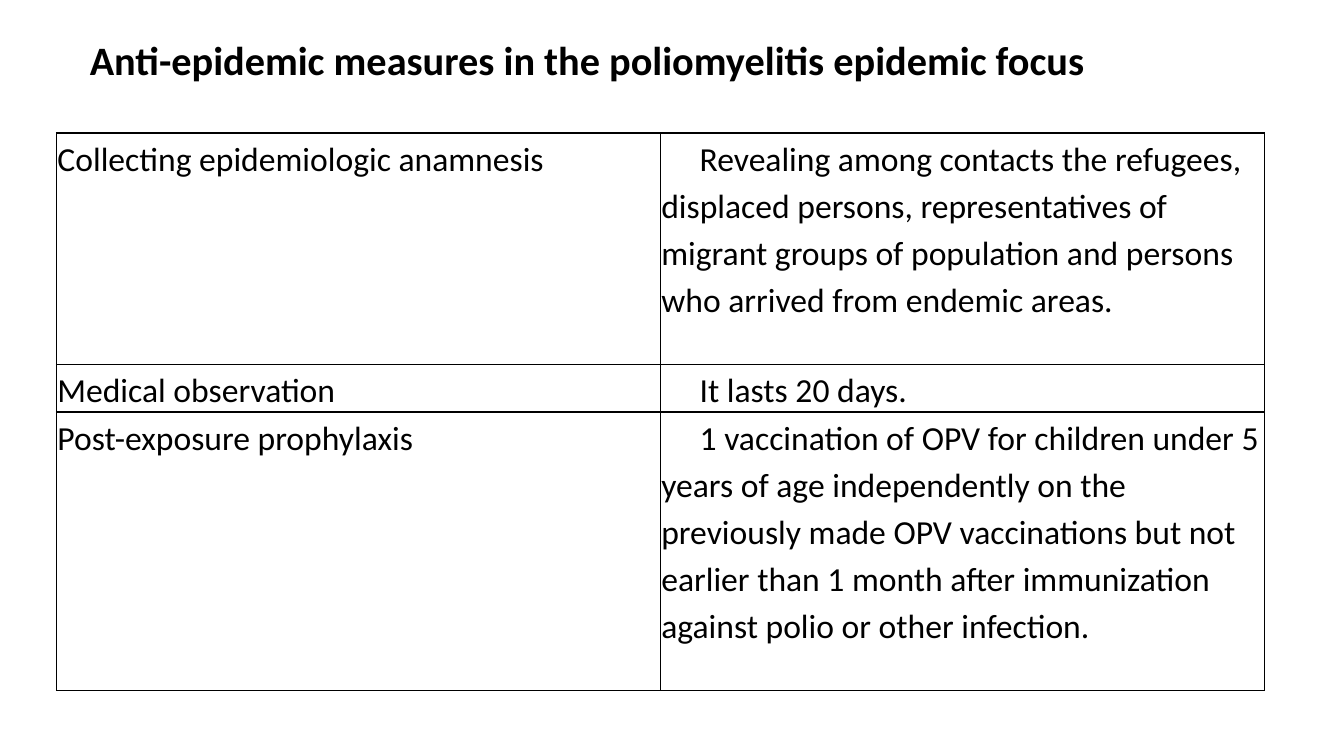
"""Build a slide with a table of measures in a poliomyelitis focus."""
import pptx
import pptx.dml.color
import pptx.enum.text
import pptx.oxml
import pptx.oxml.ns
import pptx.util

Inches = pptx.util.Inches
Pt = pptx.util.Pt


def style(para, size, space, bold=False):
    para.alignment = pptx.enum.text.PP_ALIGN.LEFT
    para.line_spacing = space
    para.font.name = "Calibri"
    para.font.size = Pt(size)
    para.font.bold = bold
    para.font.color.rgb = pptx.dml.color.RGBColor.from_string("000000")


def border(cell, color):
    props = cell._tc.get_or_add_tcPr()
    for place, side in enumerate(("lnL", "lnR", "lnT", "lnB")):
        props.insert(place, pptx.oxml.parse_xml(
            f'<a:{side} {pptx.oxml.ns.nsdecls("a")} w="{Pt(1)}">'
            f'<a:solidFill><a:srgbClr val="{color}"/></a:solidFill></a:{side}>'))


rows = [
    (2.3, "Collecting epidemiologic anamnesis",
     "Revealing among contacts the refugees, displaced persons, representatives "
     "of migrant groups of population and persons who arrived from endemic areas."),
    (0.46, "Medical observation", "It lasts 20 days."),
    (2.76, "Post-exposure prophylaxis",
     "1 vaccination of OPV for children under 5 years of age independently on the "
     "previously made OPV vaccinations but not earlier than 1 month after "
     "immunization against polio or other infection."),
]

deck = pptx.Presentation()
deck.slide_width = Inches(13.33)
deck.slide_height = Inches(7.5)
slide = deck.slides.add_slide(deck.slide_layouts[5])

title = slide.shapes.title
title.left, title.top = Inches(0.79), Inches(0.37)
title.width, title.height = Inches(11.5), Inches(0.95)
frame = title.text_frame
frame.text = "Anti-epidemic measures in the poliomyelitis epidemic focus"
frame.vertical_anchor = pptx.enum.text.MSO_ANCHOR.TOP
frame.margin_top = Inches(0.03)
style(frame.paragraphs[0], 28.8, 0.9, True)

table = slide.shapes.add_table(
    len(rows), 2, Inches(0.56), Inches(1.32), Inches(11.97), Inches(5.52)).table
table.first_row = False
table.horz_banding = False
for col in table.columns:
    col.width = Inches(5.99)

for row, (height, *texts) in enumerate(rows):
    table.rows[row].height = Inches(height)
    for col, text in enumerate(texts):
        cell = table.cell(row, col)
        cell.text = text
        cell.margin_left = cell.margin_right = Inches(0.01)
        cell.margin_top = cell.margin_bottom = 0
        cell.fill.background()
        border(cell, "000000")
        para = cell.text_frame.paragraphs[0]
        style(para, 24, 1.15)
        if col == 1:
            para._p.get_or_add_pPr().set("indent", str(Inches(0.38)))

deck.save("out.pptx")
